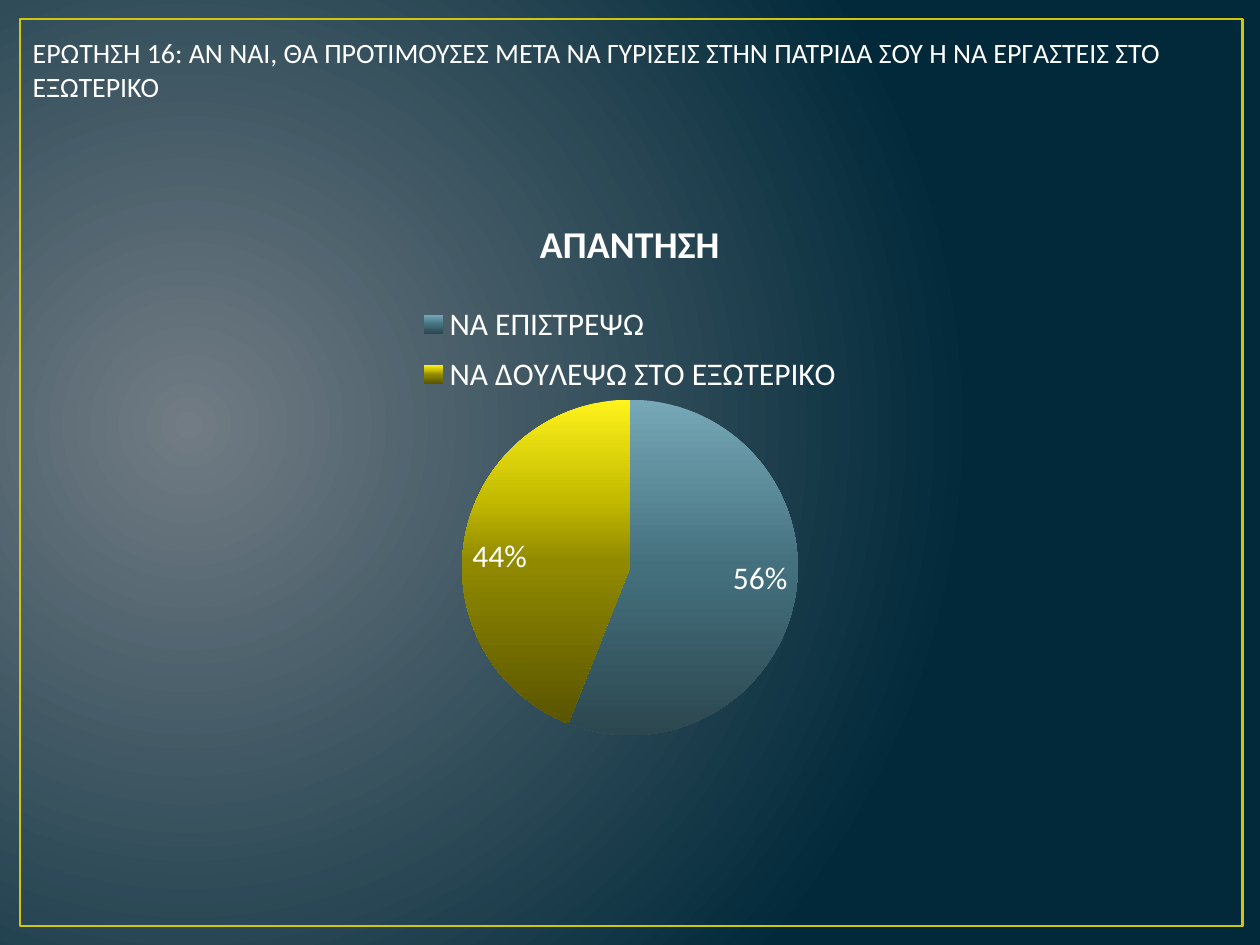
import pptx
import pptx.chart.data
import pptx.dml.color
import pptx.enum.chart
import pptx.enum.shapes
import pptx.enum.text
import pptx.oxml
import pptx.oxml.ns
import pptx.util

THEME = {
    "font": "Calibri",
    "text": "FFFFFF",
    "frame": "CFC60D",
    "background": [(0, "717C84"), (100, "01293A")],
    "slices": [
        [(0, "76A8B7"), (50, "44707E"), (100, "2C474F")],
        [(0, "FFF31C"), (30, "C5BC00"), (50, "918A00"), (100, "5A5500")],
    ],
    "heading_size": 16,
    "chart_size": 18,
    "chart_title_size": 21.6,
}
RADIAL = ('<a:path path="circle"><a:fillToRect l="15000" t="50000" '
          'r="85000" b="60000"/></a:path>')
DOWNWARD = '<a:lin ang="5400000" scaled="0"/>'


def set_gradient(fill, parent, stops, direction):
    """Give fill, held in the XML element parent, a gradient of (percent, colour) stops."""
    fill.gradient()
    old = parent.find(".//" + pptx.oxml.ns.qn("a:gradFill"))
    stop_xml = "".join(
        f'<a:gs pos="{percent * 1000}"><a:srgbClr val="{colour}"/></a:gs>'
        for percent, colour in stops)
    old.getparent().replace(old, pptx.oxml.parse_xml(
        f'<a:gradFill {pptx.oxml.ns.nsdecls("a")} rotWithShape="1">'
        f'<a:gsLst>{stop_xml}</a:gsLst>{direction}</a:gradFill>'))


def style_font(font, size, bold=False):
    for name, value in {"name": THEME["font"], "size": pptx.util.Pt(size), "bold": bold}.items():
        setattr(font, name, value)
    font.color.rgb = pptx.dml.color.RGBColor.from_string(THEME["text"])


presentation = pptx.Presentation()
presentation.slide_width = pptx.util.Inches(10)
presentation.slide_height = pptx.util.Inches(7.5)
width, height = presentation.slide_width, presentation.slide_height
slide = presentation.slides.add_slide(presentation.slide_layouts[5])
set_gradient(slide.background.fill, slide.element, THEME["background"], RADIAL)

# Frame, 2 % of the height in from the edges
margin_x, margin_y = int(width * 0.016), int(height * 0.02)
frame = slide.shapes.add_shape(
    pptx.enum.shapes.MSO_SHAPE.RECTANGLE, margin_x, margin_y,
    int(width * 0.97), height - 2 * margin_y)
frame.shadow.inherit = False
frame.fill.background()
frame.line.color.rgb = pptx.dml.color.RGBColor.from_string(THEME["frame"])
frame.line.width = pptx.util.Pt(1.5)

# Question
title = slide.shapes.title
for name, value in {"left": margin_x, "top": int(height * 0.031),
                    "width": int(width * 0.969), "height": int(height * 0.085)}.items():
    setattr(title, name, value)
title.text_frame.text = ("ΕΡΩΤΗΣΗ 16: ΑΝ ΝΑΙ, ΘΑ ΠΡΟΤΙΜΟΥΣΕΣ ΜΕΤΑ ΝΑ ΓΥΡΙΣΕΙΣ ΣΤΗΝ ΠΑΤΡΙΔΑ ΣΟΥ "
                         "Η ΝΑ ΕΡΓΑΣΤΕΙΣ ΣΤΟ ΕΞΩΤΕΡΙΚΟ")
for name, value in {"word_wrap": True,
                    "auto_size": pptx.enum.text.MSO_AUTO_SIZE.NONE,
                    "vertical_anchor": pptx.enum.text.MSO_ANCHOR.TOP}.items():
    setattr(title.text_frame, name, value)
paragraph = title.text_frame.paragraphs[0]
paragraph.alignment = pptx.enum.text.PP_ALIGN.LEFT
style_font(paragraph.runs[0].font, THEME["heading_size"])

# Answers: a chart two thirds of the slide wide, centred on it
data = pptx.chart.data.CategoryChartData()
data.categories = ["ΝΑ ΕΠΙΣΤΡΕΨΩ", "ΝΑ ΔΟΥΛΕΨΩ ΣΤΟ ΕΞΩΤΕΡΙΚΟ"]
data.add_series("ΑΠΑΝΤΗΣΗ", [56, 44])
chart_width, chart_height = width * 2 // 3, int(height * 0.592)
chart = slide.shapes.add_chart(
    pptx.enum.chart.XL_CHART_TYPE.PIE, (width - chart_width) // 2,
    (height - chart_height) // 2, chart_width, chart_height, data).chart
style_font(chart.font, THEME["chart_size"])
chart.has_title = True
chart.chart_title.text_frame.text = "ΑΠΑΝΤΗΣΗ"
style_font(chart.chart_title.text_frame.paragraphs[0].runs[0].font,
           THEME["chart_title_size"], bold=True)
chart.has_legend = True
chart.legend.position = pptx.enum.chart.XL_LEGEND_POSITION.TOP
chart.legend.include_in_layout = False
style_font(chart.legend.font, THEME["chart_size"])

plot = chart.plots[0]
plot.vary_by_categories = True
plot.has_data_labels = True
for name, value in {"show_percentage": True, "show_value": False,
                    "number_format": "0%", "number_format_is_linked": False,
                    "position": pptx.enum.chart.XL_LABEL_POSITION.INSIDE_END}.items():
    setattr(plot.data_labels, name, value)
style_font(plot.data_labels.font, THEME["chart_size"])
series = plot.series[0]
for index, stops in enumerate(THEME["slices"]):
    point = series.points[index]
    point.format.line.fill.background()
    set_gradient(point.format.fill, series._element.findall(pptx.oxml.ns.qn("c:dPt"))[index],
                 stops, DOWNWARD)

# Legend and pie placed as shares of the chart: x, y, w, h
layouts = {"c:legend": (0.24, 0.18, 0.52, 0.2), "c:plotArea": (0.3, 0.37, 0.4, 0.6)}
for tag, shares in layouts.items():
    part = chart.element.find(".//" + pptx.oxml.ns.qn(tag))
    for old in part.findall(pptx.oxml.ns.qn("c:layout")):
        part.remove(old)
    inner = '<c:layoutTarget val="inner"/>' if tag == "c:plotArea" else ""
    modes = '<c:xMode val="edge"/><c:yMode val="edge"/>'
    values = "".join(f'<c:{name} val="{share}"/>' for name, share in zip("xywh", shares))
    layout = pptx.oxml.parse_xml(
        f'<c:layout {pptx.oxml.ns.nsdecls("c")}><c:manualLayout>{inner}{modes}{values}'
        '</c:manualLayout></c:layout>')
    part.insert(0 if inner else 1, layout)

presentation.save("out.pptx")
